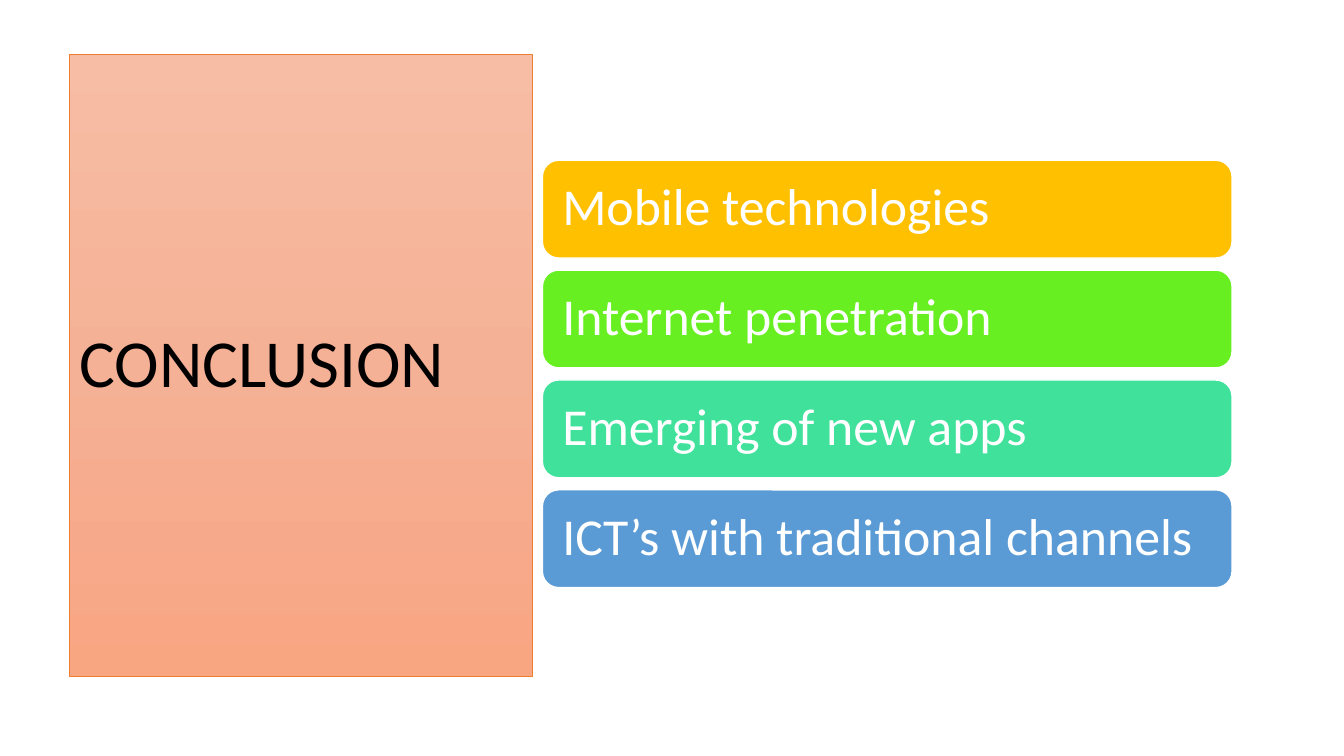
from copy import deepcopy
from dataclasses import dataclass

from pptx import Presentation
from pptx.dml.color import RGBColor
from pptx.enum.shapes import MSO_SHAPE as Preset
from pptx.enum.text import MSO_ANCHOR as Anchor, MSO_AUTO_SIZE as AutoSize, PP_ALIGN as Align
from pptx.oxml.ns import qn
from pptx.shapes.autoshape import Shape
from pptx.slide import Slide
from pptx.text.text import TextFrame
from pptx.util import Emu, Pt

PX_PER_INCH = 100
EMU_PER_PX = 914400 // PX_PER_INCH


@dataclass(frozen=True)
class Theme:
    font: str = "Calibri"
    title_size: int = 48
    bar_size: int = 37
    title_text: str = "000000"
    title_line: str = "ED7D31"
    title_gradient: tuple[str, ...] = ("F7BDA5", "F5B196", "F8A582")
    white: str = "FFFFFF"


@dataclass(frozen=True)
class Box:
    left: int
    top: int
    width: int
    height: int


@dataclass(frozen=True)
class Bar:
    text: str
    fill: str


THEME = Theme()
TITLE_BOX = Box(69, 54, 459, 617)
FIRST_BAR = Box(538, 159, 684, 97)
BAR_PITCH = 109
BAR_INSET = 15
BARS = (
    Bar("Mobile technologies", "FFC000"),
    Bar("Internet penetration", "67EF21"),
    Bar("Emerging of new apps", "3FE19B"),
    Bar("ICT’s with traditional channels", "5B9BD5"),
)


def px(length: int) -> Emu:
    return Emu(length * EMU_PER_PX)


def color(code: str) -> RGBColor:
    return RGBColor.from_string(code)


def write(frame: TextFrame, text: str, *, size: int, ink: str, inset: int | None = None) -> None:
    frame.word_wrap = True
    frame.auto_size = AutoSize.NONE
    frame.vertical_anchor = Anchor.MIDDLE
    if inset is not None:
        frame.margin_left = frame.margin_right = px(inset)
        frame.margin_top = frame.margin_bottom = px(inset)
    para = frame.paragraphs[0]
    para.alignment = Align.LEFT
    para.line_spacing = 0.9
    span = para.add_run()
    span.text = text
    span.font.name = THEME.font
    span.font.size = Pt(size)
    span.font.color.rgb = color(ink)


def outline(shape: Shape, code: str, width: float) -> None:
    shape.line.color.rgb = color(code)
    shape.line.width = Pt(width)


def fill_gradient(shape: Shape, codes: tuple[str, ...]) -> None:
    """Spread the colours evenly from top to bottom."""
    shape.fill.gradient()
    shape.fill.gradient_angle = 270
    stop_list = next(shape.element.iter(qn("a:gsLst")))
    for _ in codes[2:]:
        stop_list.append(deepcopy(stop_list[-1]))
    for index, (stop, code) in enumerate(zip(shape.fill.gradient_stops, codes)):
        stop.color.rgb = color(code)
        stop.position = index / (len(codes) - 1)


def draw_title(page: Slide, text: str, box: Box) -> None:
    title = page.shapes.title
    title.left, title.top = px(box.left), px(box.top)
    title.width, title.height = px(box.width), px(box.height)
    fill_gradient(title, THEME.title_gradient)
    outline(title, THEME.title_line, 0.5)
    write(title.text_frame, text, size=THEME.title_size, ink=THEME.title_text)


def draw_bar(page: Slide, bar: Bar, box: Box) -> None:
    shape = page.shapes.add_shape(
        Preset.ROUNDED_RECTANGLE, px(box.left), px(box.top), px(box.width), px(box.height)
    )
    shape.shadow.inherit = False
    shape.fill.solid()
    shape.fill.fore_color.rgb = color(bar.fill)
    outline(shape, THEME.white, 1)
    write(shape.text_frame, bar.text, size=THEME.bar_size, ink=THEME.white, inset=BAR_INSET)


def main() -> None:
    deck = Presentation()
    deck.slide_width, deck.slide_height = px(1333), px(750)
    page = deck.slides.add_slide(deck.slide_layouts.get_by_name("Title Only"))

    # Title panel
    draw_title(page, "CONCLUSION", TITLE_BOX)

    # Stack of conclusion bars
    for index, bar in enumerate(BARS):
        top = FIRST_BAR.top + index * BAR_PITCH
        draw_bar(page, bar, Box(FIRST_BAR.left, top, FIRST_BAR.width, FIRST_BAR.height))

    deck.save("out.pptx")


if __name__ == "__main__":
    main()
